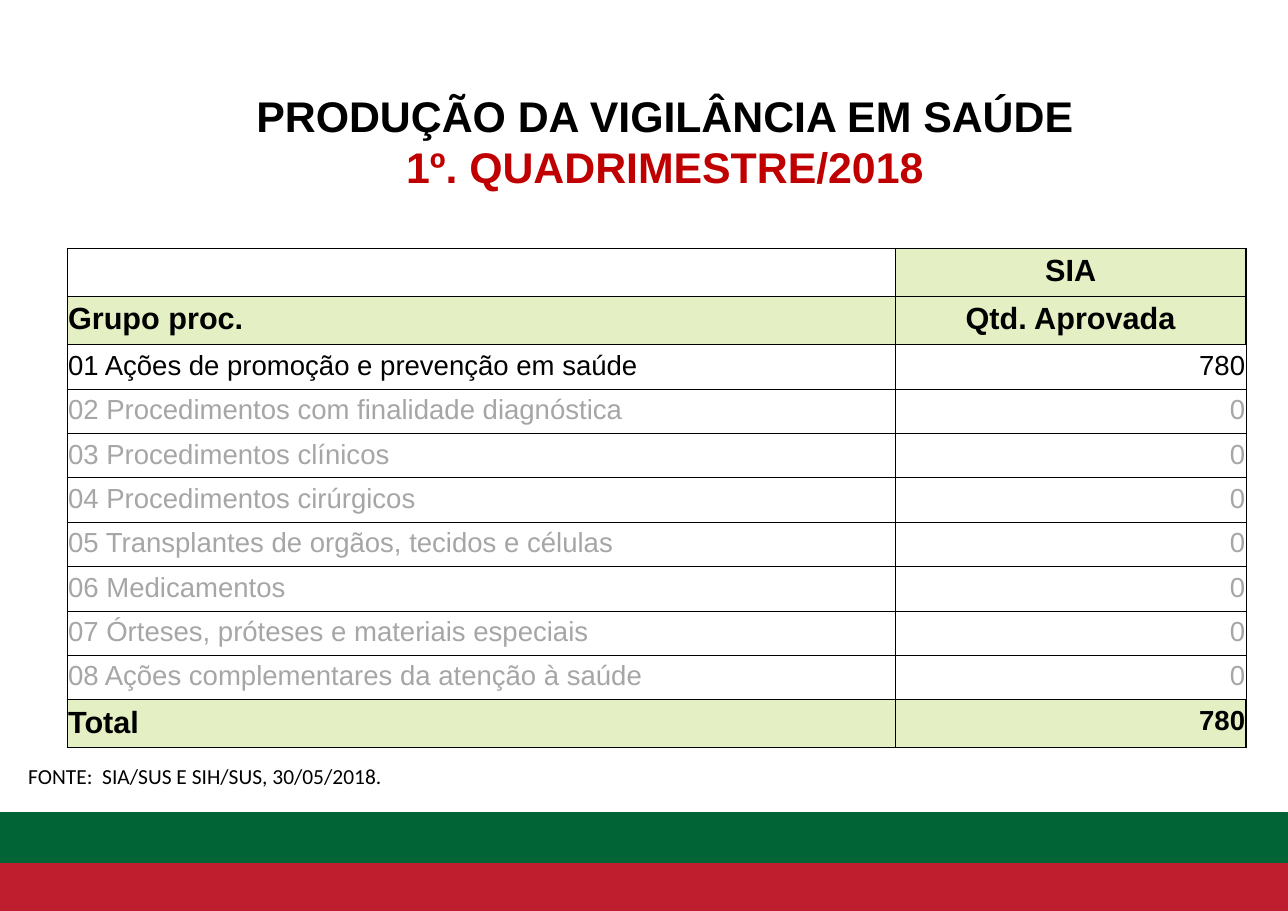
from lxml import etree
from pptx import Presentation
from pptx.dml.color import RGBColor
from pptx.enum.shapes import MSO_SHAPE
from pptx.enum.text import MSO_ANCHOR, PP_ALIGN
from pptx.oxml.ns import qn
from pptx.util import Cm, Pt

RECT = MSO_SHAPE.RECTANGLE
TOP, MIDDLE = MSO_ANCHOR.TOP, MSO_ANCHOR.MIDDLE
LEFT, CENTER, RIGHT = PP_ALIGN.LEFT, PP_ALIGN.CENTER, PP_ALIGN.RIGHT

WIDE, HIGH = 29.7, 21
BLACK, GRAY, LIME = "000000", "A6A6A6", "E4F0C3"
GREEN, RED, DARK_RED = "006436", "BE1E2E", "C00000"
THICK, THIN = 0.96, 0.5

HEADS = [("", "SIA"), ("Grupo proc.", "Qtd. Aprovada")]
GROUPS = [
    ("01 Ações de promoção e prevenção em saúde", 780),
    ("02 Procedimentos com finalidade diagnóstica", 0),
    ("03 Procedimentos clínicos", 0),
    ("04 Procedimentos cirúrgicos", 0),
    ("05 Transplantes de orgãos, tecidos e células", 0),
    ("06 Medicamentos", 0),
    ("07 Órteses, próteses e materiais especiais", 0),
    ("08 Ações complementares da atenção à saúde", 0),
]


def color(code):
    return RGBColor.from_string(code)


def write(par, text, size=18, font="Arial", ink=BLACK, bold=False, align=LEFT):
    par.alignment = align
    run = par.add_run()
    run.text = text
    run.font.size = Pt(size)
    run.font.name = font
    run.font.bold = bold
    run.font.color.rgb = color(ink)


def frame(slide, box, pad_x=0, pad_y=0, anchor=TOP):
    text = slide.shapes.add_textbox(*map(Cm, box)).text_frame
    text.word_wrap = True
    text.vertical_anchor = anchor
    text.margin_left = text.margin_right = Cm(pad_x)
    text.margin_top = text.margin_bottom = Cm(pad_y)
    return text


def edge(cell, width):
    props = cell._tc.get_or_add_tcPr()
    for spot, side in enumerate(("lnL", "lnR", "lnT", "lnB")):
        line = etree.Element(qn(f"a:{side}"), w=str(Pt(width)))
        fill = etree.SubElement(line, qn("a:solidFill"))
        etree.SubElement(fill, qn("a:srgbClr"), val=BLACK)
        props.insert(spot, line)


def fill_cell(cell, text, back=None, width=THIN, **style):
    cell.margin_left = cell.margin_right = Cm(0.02)
    cell.margin_top = cell.margin_bottom = Cm(0.13)
    if back:
        cell.fill.solid()
        cell.fill.fore_color.rgb = color(back)
    else:
        cell.fill.background()
    edge(cell, width)
    if text:
        write(cell.text_frame.paragraphs[0], text, **style)


def add_bands(slide, left, top, width, height):
    # Red lies behind, green overlaps its upper edge
    band = 1.15
    for y, code in ((top + height - band, RED), (top, GREEN)):
        bar = slide.shapes.add_shape(RECT, Cm(left), Cm(y), Cm(width), Cm(band))
        bar.shadow.inherit = False
        bar.fill.solid()
        bar.fill.fore_color.rgb = color(code)
        bar.line.color.rgb = color(code)
        bar.line.width = Pt(0.75)


def add_title(slide, *box):
    text = frame(slide, box, anchor=MIDDLE)
    style = dict(size=28, bold=True, align=CENTER)
    write(text.paragraphs[0], "PRODUÇÃO DA VIGILÂNCIA EM SAÚDE", **style)
    write(text.add_paragraph(), "1º. QUADRIMESTRE/2018", ink=DARK_RED, **style)


def add_grid(slide, left, top, width, height):
    count = len(HEADS) + len(GROUPS) + 1
    grid = slide.shapes.add_table(
        count, 2, Cm(left), Cm(top), Cm(width), Cm(height)).table
    grid.first_row = grid.horz_banding = False
    first = 19.1
    grid.columns[0].width = Cm(first)
    grid.columns[1].width = Cm(width - first)

    # Group rows share what the taller head and total rows leave
    tall = 1.1
    low = (height - tall * (len(HEADS) + 1)) / len(GROUPS)
    for row in grid.rows:
        row.height = Cm(tall)

    # Heads
    strong = dict(width=THICK, bold=True)
    for r, names in enumerate(HEADS):
        for c, name in enumerate(names):
            fill_cell(grid.cell(r, c), name, back=LIME if name else None,
                      size=20, align=CENTER if c else LEFT, **strong)

    # Groups, with zero counts in gray
    for r, (name, value) in enumerate(GROUPS, len(HEADS)):
        grid.rows[r].height = Cm(low)
        ink = BLACK if value else GRAY
        fill_cell(grid.cell(r, 0), name, ink=ink)
        fill_cell(grid.cell(r, 1), str(value), ink=ink, align=RIGHT)

    # Total
    total = sum(value for _, value in GROUPS)
    fill_cell(grid.cell(count - 1, 0), "Total", back=LIME, size=20, **strong)
    fill_cell(grid.cell(count - 1, 1), str(total), back=LIME, align=RIGHT, **strong)


def add_source(slide, *box):
    text = frame(slide, box, pad_x=0.25, pad_y=0.13)
    write(text.paragraphs[0], "FONTE:  SIA/SUS E SIH/SUS, 30/05/2018.",
          size=14, font="Calibri")


def main():
    deck = Presentation()
    deck.slide_width, deck.slide_height = Cm(WIDE), Cm(HIGH)
    slide = deck.slides.add_slide(deck.slide_layouts[6])
    add_bands(slide, 0, 18.74, WIDE, HIGH - 18.74)
    add_title(slide, 5.46, 1.5, 19.74, 3.5)
    add_grid(slide, 1.55, 5.73, 27.18, 11.44)
    add_source(slide, 0.4, 17.47, 11.6, 1.07)
    deck.save("out.pptx")


if __name__ == "__main__":
    main()
